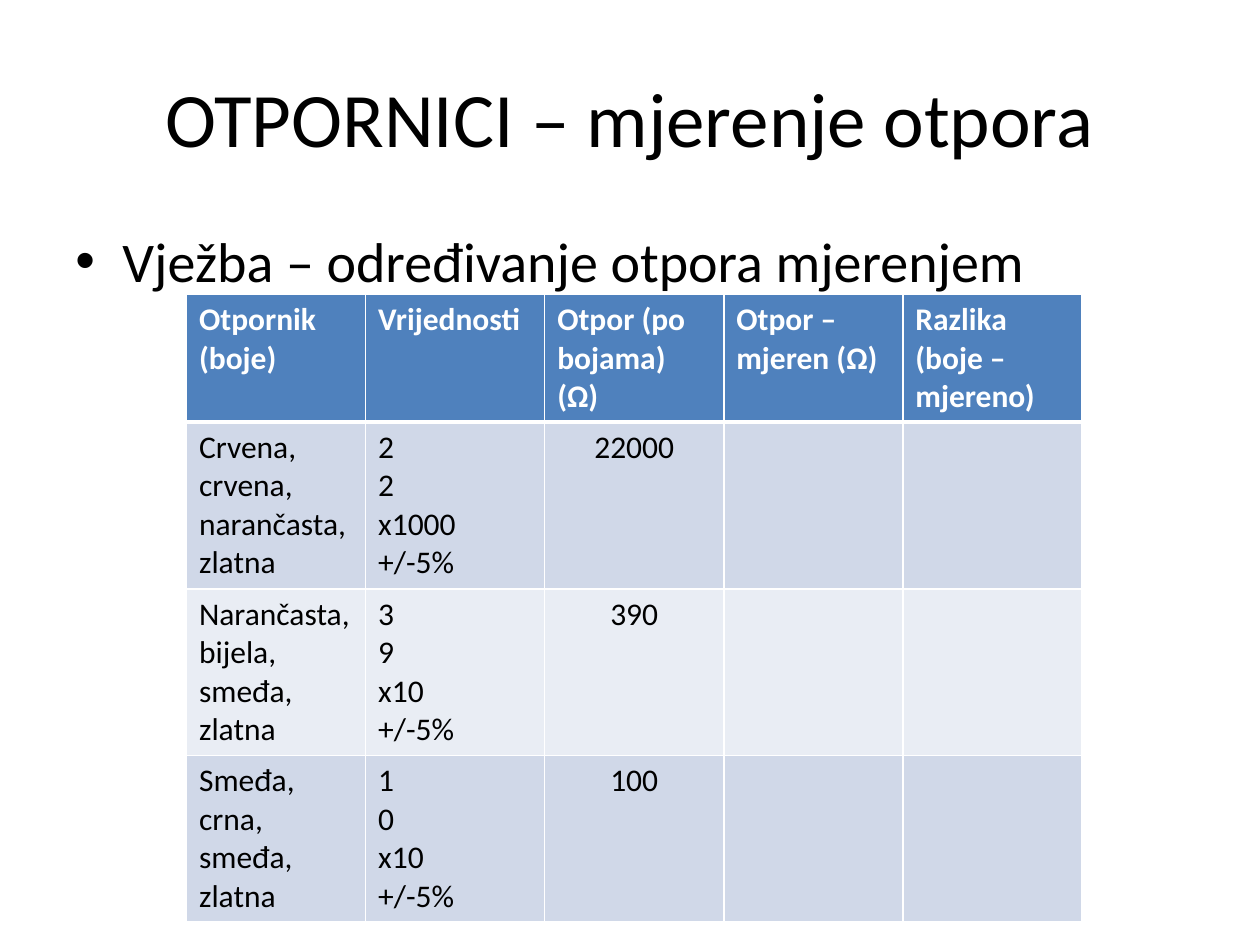
from dataclasses import dataclass

from lxml import etree
from pptx import Presentation
from pptx.dml.color import RGBColor
from pptx.enum.text import MSO_ANCHOR, PP_ALIGN
from pptx.oxml.ns import qn
from pptx.util import Cm, Pt

LEFT, CENTER = PP_ALIGN.LEFT, PP_ALIGN.CENTER
TOP, MIDDLE = MSO_ANCHOR.TOP, MSO_ANCHOR.MIDDLE


@dataclass(frozen=True)
class Theme:
    font: str = "Calibri"
    text: str = "000000"
    light: str = "FFFFFF"
    header: str = "4F81BD"
    bands: tuple[str, str] = ("D0D8E8", "E9EDF4")
    title_size: int = 44
    body_size: int = 32
    table_size: int = 18
    border: int = 1
    header_border: int = 3


@dataclass(frozen=True)
class Box:
    left: float
    top: float
    width: float
    height: float


@dataclass(frozen=True)
class Resistor:
    colours: str
    values: tuple[str, ...]
    ohms: str


THEME = Theme()
TITLE_BOX = Box(1.27, 0.76, 22.86, 3.18)
BODY_BOX = Box(1.27, 4.45, 22.56, 2.9)
TABLE_LEFT, TABLE_TOP = 3.76, 5.94
COLUMN_WIDTH, HEADER_HEIGHT, ROW_HEIGHT = 3.61, 2.57, 3.36
HEADERS = ("Otpornik (boje)", "Vrijednosti", "Otpor (po bojama) (Ω)",
           "Otpor – mjeren (Ω)", "Razlika (boje – mjereno)")
RESISTORS = (
    Resistor("Crvena, crvena, narančasta, zlatna", ("2", "2", "x1000", "+/-5%"), "22000"),
    Resistor("Narančasta, bijela, smeđa, zlatna", ("3", "9", "x10", "+/-5%"), "390"),
    Resistor("Smeđa, crna, smeđa, zlatna", ("1", "0", "x10", "+/-5%"), "100"),
)


def write(tf, lines: tuple[str, ...], size: int, color: str = THEME.text,
          bold: bool = False, align=LEFT) -> None:
    tf.word_wrap = True
    tf.text = "\n".join(lines)
    for p in tf.paragraphs:
        p.alignment = align
        p.font.name = THEME.font
        p.font.size = Pt(size)
        p.font.bold = bold
        p.font.color.rgb = RGBColor.from_string(color)


def add_text(slide, box: Box, text: str, size: int, align=LEFT, anchor=TOP):
    tb = slide.shapes.add_textbox(Cm(box.left), Cm(box.top), Cm(box.width), Cm(box.height))
    tf = tb.text_frame
    write(tf, (text,), size, align=align)
    tf.vertical_anchor = anchor
    return tf.paragraphs[0]


def add_bullet(p, indent: float) -> None:
    """Give the paragraph a round bullet with a hanging indent in centimetres."""
    pPr = p._p.get_or_add_pPr()
    pPr.set("marL", str(Cm(indent)))
    pPr.set("indent", str(-Cm(indent)))
    font = etree.Element(qn("a:buFont"), typeface="Arial")
    char = etree.Element(qn("a:buChar"), char="•")
    pPr.find(qn("a:defRPr")).addprevious(font)
    font.addnext(char)


def set_borders(cell, top: int, bottom: int) -> None:
    """Draw the four cell borders, with top and bottom widths in points."""
    tcPr = cell._tc.get_or_add_tcPr()
    widths = {"a:lnL": THEME.border, "a:lnR": THEME.border, "a:lnT": top, "a:lnB": bottom}
    for i, (tag, width) in enumerate(widths.items()):
        ln = etree.Element(qn(tag), w=str(Pt(width)))
        fill = etree.SubElement(ln, qn("a:solidFill"))
        etree.SubElement(fill, qn("a:srgbClr"), val=THEME.light)
        tcPr.insert(i, ln)


def fill_cell(cell, row: int, lines: tuple[str, ...], align=LEFT) -> None:
    header = row == 0
    write(cell.text_frame, lines, THEME.table_size,
          THEME.light if header else THEME.text, header, align)
    cell.fill.solid()
    color = THEME.header if header else THEME.bands[(row - 1) % 2]
    cell.fill.fore_color.rgb = RGBColor.from_string(color)
    set_borders(cell, THEME.header_border if row == 1 else THEME.border,
                THEME.header_border if header else THEME.border)


def add_resistor_table(slide) -> None:
    heights = [HEADER_HEIGHT] + [ROW_HEIGHT] * len(RESISTORS)
    table = slide.shapes.add_table(
        len(heights), len(HEADERS), Cm(TABLE_LEFT), Cm(TABLE_TOP),
        Cm(COLUMN_WIDTH * len(HEADERS)), Cm(sum(heights))).table
    for column in table.columns:
        column.width = Cm(COLUMN_WIDTH)
    for row, height in zip(table.rows, heights):
        row.height = Cm(height)
    for col, header in enumerate(HEADERS):
        fill_cell(table.cell(0, col), 0, (header,))
    for row, resistor in enumerate(RESISTORS, 1):
        contents = ((resistor.colours,), resistor.values, (resistor.ohms,), (), ())
        for col, lines in enumerate(contents):
            fill_cell(table.cell(row, col), row, lines, CENTER if col == 2 else LEFT)


def main() -> None:
    prs = Presentation()
    prs.slide_width, prs.slide_height = Cm(25.4), Cm(19.05)
    slide = prs.slides.add_slide(prs.slide_layouts[6])
    add_text(slide, TITLE_BOX, "OTPORNICI – mjerenje otpora", THEME.title_size, CENTER, MIDDLE)
    p = add_text(slide, BODY_BOX, "Vježba – određivanje otpora mjerenjem", THEME.body_size)
    p.space_before = Pt(6.4)
    add_bullet(p, 0.95)
    add_resistor_table(slide)
    prs.save("out.pptx")


if __name__ == "__main__":
    main()
